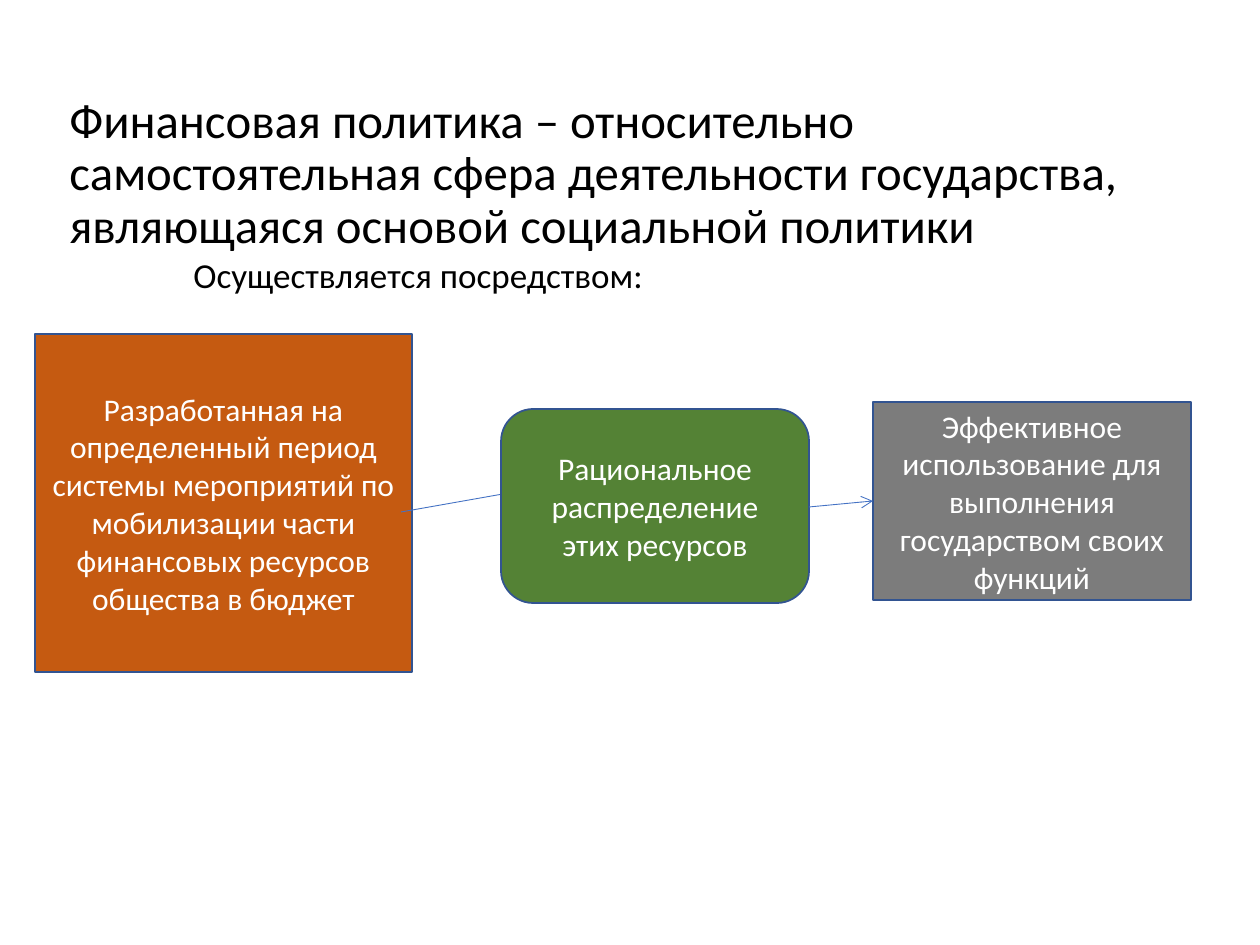
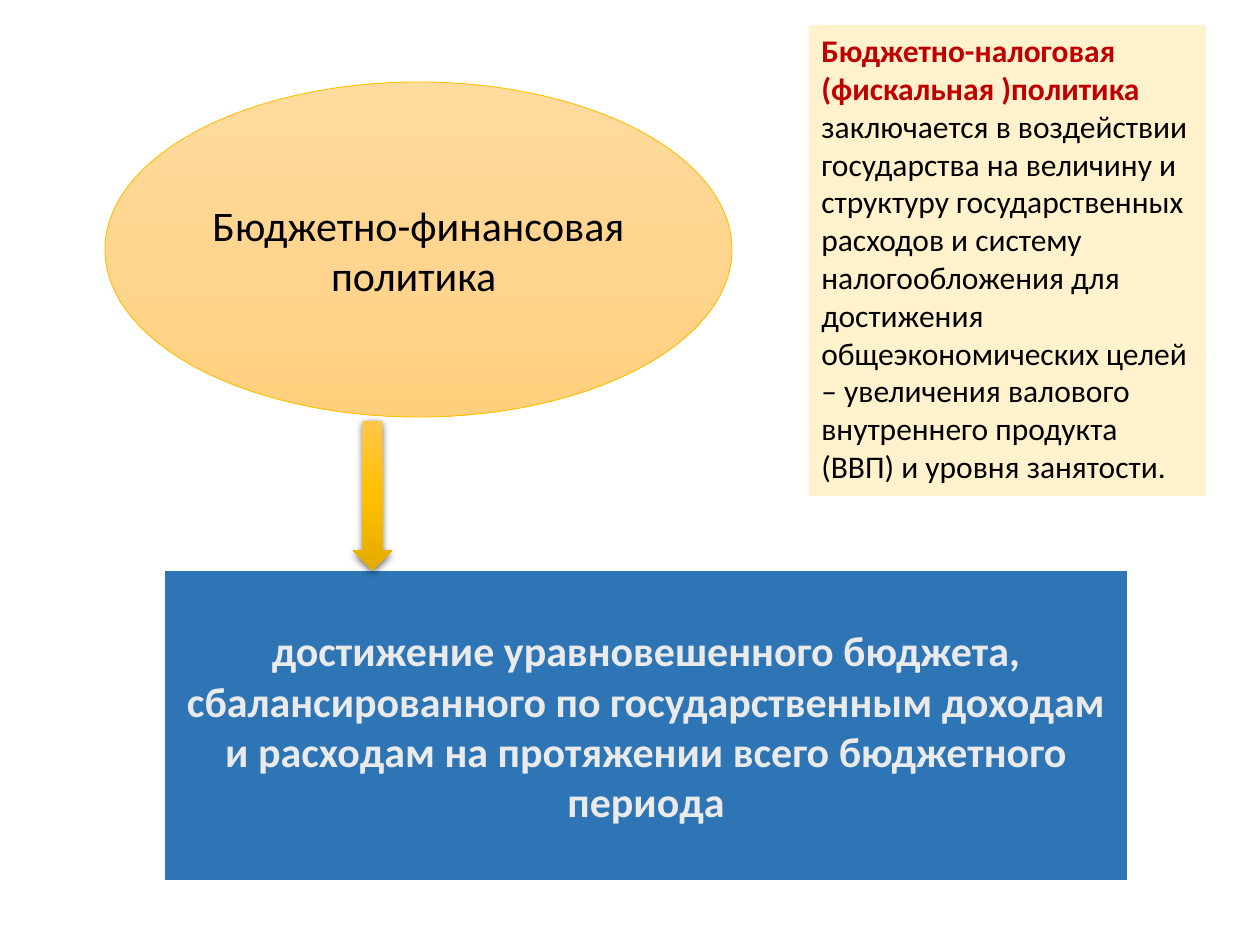
from dataclasses import dataclass
from typing import Optional

from pptx import Presentation
from pptx.dml.color import RGBColor
from pptx.enum.shapes import MSO_CONNECTOR, MSO_SHAPE as SHAPE
from pptx.enum.text import MSO_ANCHOR as ANCHOR, PP_ALIGN as ALIGN
from pptx.oxml import parse_xml
from pptx.oxml.ns import nsdecls, qn
from pptx.util import Emu, Pt

FONT = "Calibri"
COLORS = {
    "black": "000000", "white": "FFFFFF", "pale": "EBEAEA", "red": "C00000",
    "orange": "C55A11", "green": "548235", "grey": "7C7C7C", "blue": "2E75B6",
    "cream": "FFF2CC", "gold": "FFC000", "outline": "325491", "link": "4472C4",
}
PEACH_FADE = ("FFDB9E", "FFD590", "FFD07C")
GOLD_FADE = ("FFC64B", "FFC000", "E3AB00")


@dataclass(frozen=True)
class Run:
    text: str
    size: float = 18
    color: str = "white"
    bold: bool = False


@dataclass(frozen=True)
class Block:
    kind: SHAPE
    box: tuple[int, int, int, int]
    runs: tuple[Run, ...] = ()
    fill: Optional[str] = None
    fade: tuple[str, ...] = ()
    line: Optional[str] = None
    line_pt: float = 1
    align: ALIGN = ALIGN.CENTER
    anchor: ANCHOR = ANCHOR.MIDDLE


@dataclass(frozen=True)
class Link:
    start: tuple[int, int]
    end: tuple[int, int]


def px(n: int) -> Emu:
    """126 px make one inch."""
    return Emu(round(n * 914400 / 126))


def rgb(name: str) -> RGBColor:
    return RGBColor.from_string(COLORS[name])


def add_runs(p, runs: tuple[Run, ...]) -> None:
    for run in runs:
        r = p.add_run()
        r.text = run.text
        r.font.name, r.font.size, r.font.bold = FONT, Pt(run.size), run.bold
        r.font.color.rgb = rgb(run.color)


def add_text(slide, box: tuple[int, int, int, int], run: Run,
             anchor: ANCHOR = ANCHOR.TOP, tab: int = 0) -> None:
    tf = slide.shapes.add_textbox(*map(px, box)).text_frame
    tf.word_wrap, tf.vertical_anchor = True, anchor
    p = tf.paragraphs[0]
    p.line_spacing = 0.9
    if tab:
        p._p.get_or_add_pPr().append(parse_xml(
            f'<a:tabLst {nsdecls("a")}><a:tab pos="{px(tab)}" algn="l"/></a:tabLst>'))
    add_runs(p, (run,))


def add_fade(sp, fade: tuple[str, ...]) -> None:
    step = 100000 // (len(fade) - 1)
    stops = "".join(f'<a:gs pos="{i * step}"><a:srgbClr val="{c}"/></a:gs>'
                    for i, c in enumerate(fade))
    sp._element.spPr.find(qn("a:prstGeom")).addnext(parse_xml(
        f'<a:gradFill {nsdecls("a")}><a:gsLst>{stops}</a:gsLst>'
        '<a:lin ang="5400000" scaled="0"/></a:gradFill>'))


def add_block(slide, block: Block):
    sp = slide.shapes.add_shape(block.kind, *map(px, block.box))
    sp.shadow.inherit = False
    if block.fade:
        add_fade(sp, block.fade)
    else:
        sp.fill.solid()
        sp.fill.fore_color.rgb = rgb(block.fill)
    if block.line:
        sp.line.color.rgb = rgb(block.line)
        sp.line.width = Pt(block.line_pt)
    else:
        sp.line.fill.background()
    tf = sp.text_frame
    tf.word_wrap, tf.vertical_anchor = True, block.anchor
    p = tf.paragraphs[0]
    p.alignment = block.align
    add_runs(p, block.runs)
    return sp


def add_link(slide, link: Link) -> None:
    cx = slide.shapes.add_connector(
        MSO_CONNECTOR.STRAIGHT, *map(px, link.start + link.end))
    cx.line.color.rgb, cx.line.width = rgb("link"), Pt(0.5)
    cx.line._get_or_add_ln().append(
        parse_xml(f'<a:tailEnd {nsdecls("a")} type="arrow"/>'))
    cx._element.spPr.append(parse_xml(f'<a:effectLst {nsdecls("a")}/>'))


def add_drop_shadow(sp) -> None:
    sp._element.spPr.find(qn("a:effectLst")).append(parse_xml(
        f'<a:outerShdw {nsdecls("a")} blurRad="{Pt(4.5)}" dist="{Pt(1.5)}" '
        'dir="5400000" algn="ctr" rotWithShape="0"><a:srgbClr val="000000">'
        '<a:alpha val="63000"/></a:srgbClr></a:outerShdw>'))


def build_policy(slide) -> None:
    add_text(slide, (57, 96, 1134, 158), Run(
        "Финансовая политика – относительно самостоятельная сфера деятельности "
        "государства, являющаяся основой социальной политики", 27.9, "black"),
        ANCHOR.MIDDLE)
    add_text(slide, (87, 252, 1086, 600),
             Run("\tОсуществляется посредством:", 20, "black"), tab=94)

    # Three stages, the links between them in drawing order
    stages = (
        Block(SHAPE.RECTANGLE, (35, 334, 377, 338), (Run(
            "Разработанная на определенный период системы мероприятий по "
            "мобилизации части финансовых ресурсов общества в бюджет"),),
            "orange", line="outline"),
        Link((401, 512), (520, 491)),
        Block(SHAPE.ROUNDED_RECTANGLE, (501, 409, 308, 194),
              (Run("Рациональное распределение этих ресурсов"),),
              "green", line="outline"),
        Block(SHAPE.RECTANGLE, (873, 402, 318, 198), (Run(
            "Эффективное использование для выполнения государством своих функций"),),
            "grey", line="outline"),
        Link((809, 507), (873, 501)),
    )
    for item in stages:
        if isinstance(item, Link):
            add_link(slide, item)
        else:
            add_block(slide, item)


def build_budget(slide) -> None:
    # Goal, policy and the arrow from policy to goal
    add_block(slide, Block(SHAPE.RECTANGLE, (164, 570, 964, 311), (Run(
        "достижение уравновешенного бюджета, сбалансированного по "
        "государственным доходам и расходам на протяжении всего бюджетного периода",
        24, "pale", True),), "blue", line="white", line_pt=1.5))
    add_block(slide, Block(
        SHAPE.OVAL, (105, 82, 627, 335),
        (Run("Бюджетно-финансовая политика ", 24, "black"),),
        fade=PEACH_FADE, line="gold", line_pt=0.5))
    arrow = add_block(slide, Block(
        SHAPE.DOWN_ARROW, (353, 421, 39, 149), fade=GOLD_FADE))
    add_drop_shadow(arrow)

    # Definition note
    add_block(slide, Block(SHAPE.RECTANGLE, (809, 25, 397, 471), (
        Run("Бюджетно-налоговая (фискальная )политика ", color="red", bold=True),
        Run("заключается в воздействии государства на величину и структуру "
            "государственных расходов и систему налогообложения для достижения "
            "общеэкономических целей – увеличения валового внутреннего продукта "
            "(ВВП) и уровня занятости.", color="black")),
        "cream", align=ALIGN.LEFT, anchor=ANCHOR.TOP))


def main() -> None:
    prs = Presentation()
    prs.slide_width, prs.slide_height = px(1260), px(945)
    for build in (build_policy, build_budget):
        build(prs.slides.add_slide(prs.slide_layouts[6]))
    prs.save("out.pptx")


if __name__ == "__main__":
    main()
